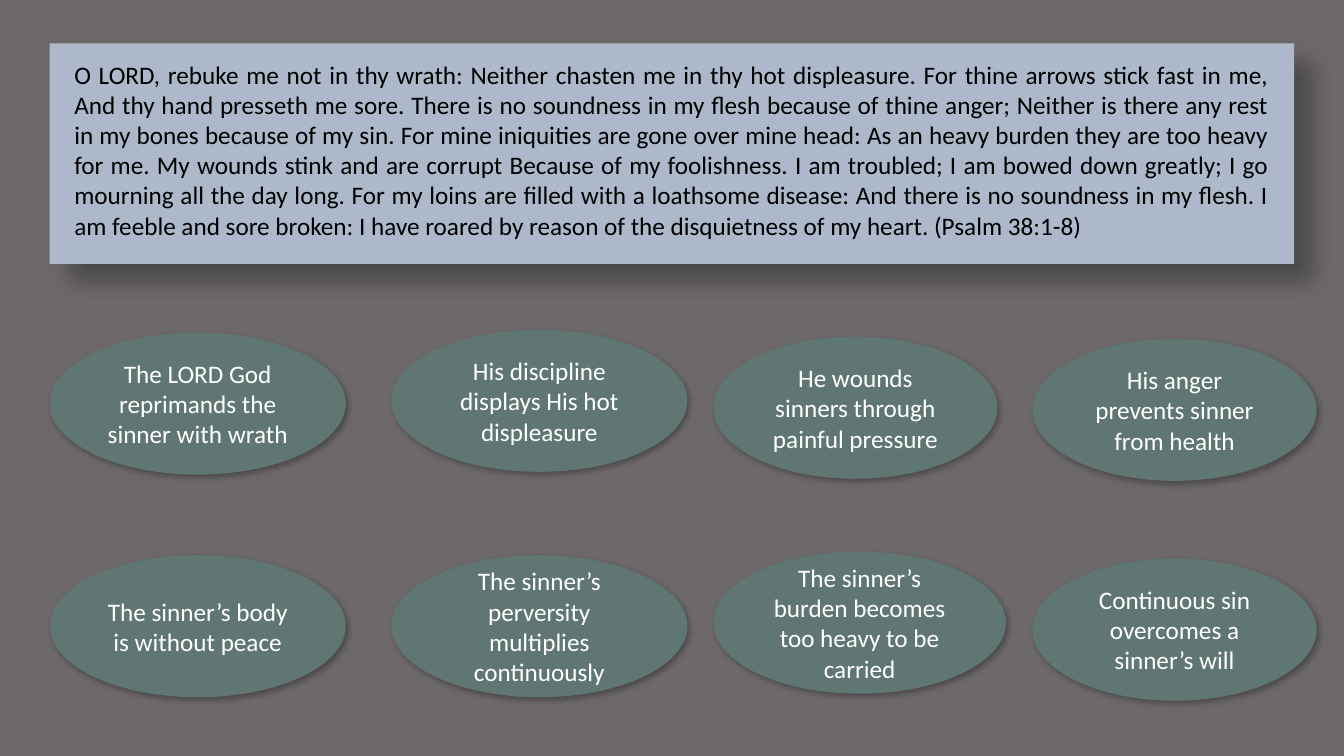
from lxml import etree
from pptx import Presentation
from pptx.dml.color import RGBColor
from pptx.enum import shapes, text
from pptx.oxml import ns
from pptx.util import Pt

PSALM = (
    "O LORD, rebuke me not in thy wrath: Neither chasten me in thy hot displeasure. "
    "For thine arrows stick fast in me, And thy hand presseth me sore. "
    "There is no soundness in my flesh because of thine anger; "
    "Neither is there any rest in my bones because of my sin. "
    "For mine iniquities are gone over mine head: "
    "As an heavy burden they are too heavy for me. "
    "My wounds stink and are corrupt Because of my foolishness. "
    "I am troubled; I am bowed down greatly; I go mourning all the day long. "
    "For my loins are filled with a loathsome disease: "
    "And there is no soundness in my flesh. "
    "I am feeble and sore broken: "
    "I have roared by reason of the disquietness of my heart. (Psalm 38:1-8)"
)
LEFTS = [35.5, 279.5, 509.5, 737.5]
TALL = 101.5
ROWS = [
    [
        ("The LORD God reprimands the sinner with wrath", 237.5, 211.5),
        ("His discipline displays His hot displeasure", 235.5, 211.5),
        ("He wounds sinners through painful pressure", 240.5, 203),
        ("His anger prevents sinner from health", 242, 203),
    ],
    [
        ("The sinner’s body is without peace", 396.5, 211.5),
        ("The sinner’s perversity multiplies continuously", 396.5, 211.5),
        ("The sinner’s burden becomes too heavy to be carried", 394, 209),
        ("Continuous sin overcomes a sinner’s will", 399, 203),
    ],
]

deck = Presentation()
deck.slide_width, deck.slide_height = Pt(960), Pt(540)
slide = deck.slides.add_slide(deck.slide_layouts[6])


def paint(fill, tone):
    fill.solid()
    fill.fore_color.rgb = RGBColor.from_string(tone)


def shade(shape, blur, gap, angle):
    shape.shadow.inherit = False
    list_ = shape._element.spPr.find(ns.qn("a:effectLst"))
    outer = etree.SubElement(
        list_, ns.qn("a:outerShdw"), blurRad=str(Pt(blur)), dist=str(Pt(gap)),
        dir=str(angle * 60000), algn="tl", rotWithShape="0")
    tint = etree.SubElement(outer, ns.qn("a:srgbClr"), val="000000")
    etree.SubElement(tint, ns.qn("a:alpha"), val="30000")


def block(kind, box, tone, shadow):
    shape = slide.shapes.add_shape(kind, *map(Pt, box))
    paint(shape.fill, tone)
    shape.line.fill.background()
    shade(shape, *shadow)
    return shape


def write(shape, words, tone, align):
    frame = shape.text_frame
    frame.word_wrap = True
    para = frame.paragraphs[0]
    para.alignment = align
    run = para.add_run()
    run.text = words
    run.font.name, run.font.size = "Calibri", Pt(18)
    paint(run.font.fill, tone)


paint(slide.background.fill, "6D696B")
block(shapes.MSO_SHAPE.RECTANGLE, (35.5, 31, 889, 157.5), "ADB9CA", (15, 18, 45))
verse = slide.shapes.add_textbox(Pt(46), Pt(38.5), Pt(867.5), Pt(138))
write(verse, PSALM, "000000", text.PP_ALIGN.JUSTIFY)

for row in ROWS:
    for left, (words, top, wide) in zip(LEFTS, row):
        oval = block(shapes.MSO_SHAPE.OVAL, (left, top, wide, TALL), "607673", (4.5, 2.6, 53))
        oval.text_frame.vertical_anchor = text.MSO_ANCHOR.MIDDLE
        write(oval, words, "FFFFFF", text.PP_ALIGN.CENTER)

deck.save("out.pptx")
